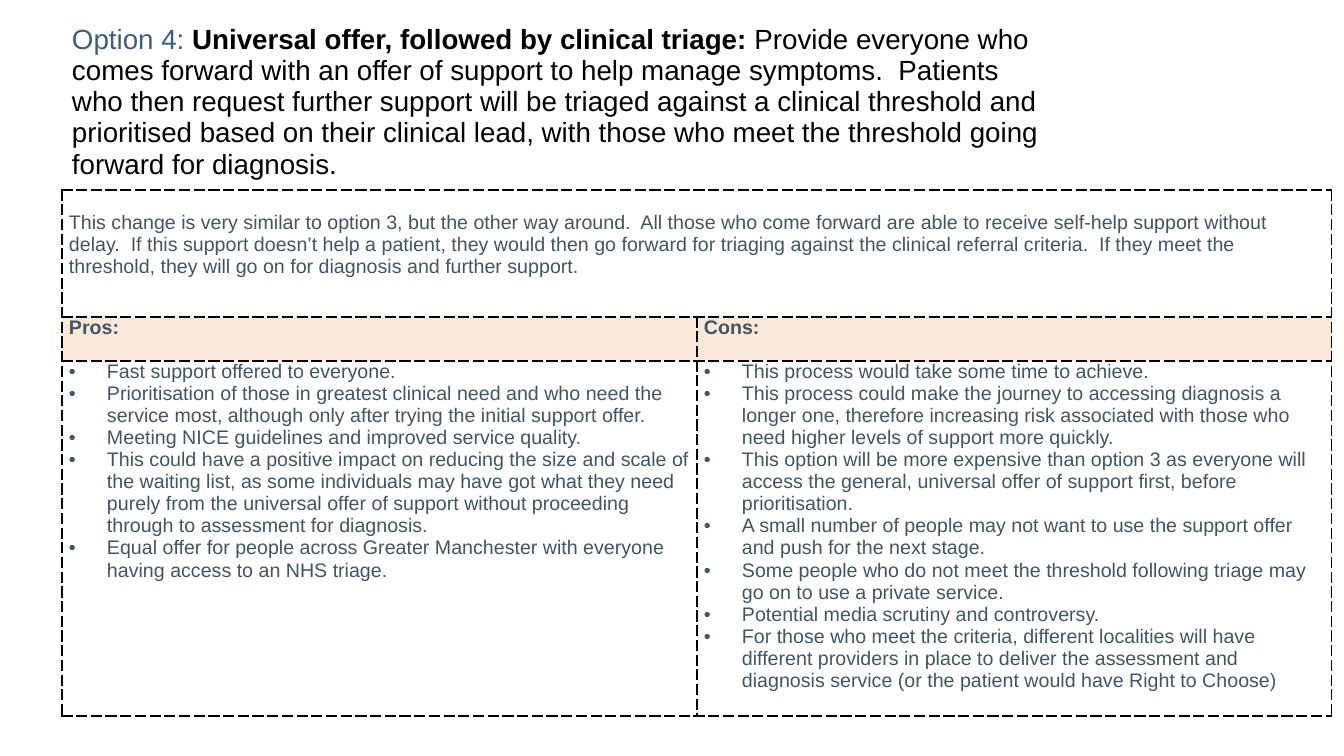
from dataclasses import dataclass

from lxml import etree
from pptx import Presentation
from pptx import util as u
from pptx.dml.color import RGBColor
from pptx.enum import text
from pptx.oxml import ns

SCALE = 914400 / 100.8
FONT = "Arial"
BLACK = RGBColor(0x00, 0x00, 0x00)
TEAL = RGBColor(0x3E, 0x5F, 0x73)
SLATE = RGBColor(0x41, 0x55, 0x63)
PEACH = RGBColor(0xFD, 0xE9, 0xD9)
WHITE = RGBColor(0xFF, 0xFF, 0xFF)
INDENT = 38
ROWS = (127, 44, 355)
COLS = (635, 635)


@dataclass(frozen=True)
class Run:
    words: str
    size: float = 14
    color: RGBColor = SLATE
    bold: bool = False


@dataclass(frozen=True)
class Panel:
    row: int
    col: int
    lines: tuple[str, ...]
    fill: RGBColor = WHITE
    bold: bool = False
    bullet: bool = False
    top: int = 0


TITLE = (
    Run("Option 4: ", 19.8, TEAL),
    Run("Universal offer, followed by clinical triage: ", 19.8, BLACK, True),
    Run("Provide everyone who comes forward with an offer of support to help "
        "manage symptoms.  Patients who then request further support will be "
        "triaged against a clinical threshold and prioritised based on their "
        "clinical lead, with those who meet the threshold going forward for "
        "diagnosis.", 19.8, BLACK),
)

SUMMARY = (
    "This change is very similar to option 3, but the other way around.  All "
    "those who come forward are able to receive self-help support without "
    "delay.  If this support doesn’t help a patient, they would then go "
    "forward for triaging against the clinical referral criteria.  If they "
    "meet the threshold, they will go on for diagnosis and further support.",
)

PROS = (
    "Fast support offered to everyone.",
    "Prioritisation of those in greatest clinical need and who need the "
    "service most, although only after trying the initial support offer.",
    "Meeting NICE guidelines and improved service quality.",
    "This could have a positive impact on reducing the size and scale of the "
    "waiting list, as some individuals may have got what they need purely "
    "from the universal offer of support without proceeding through to "
    "assessment for diagnosis.",
    "Equal offer for people across Greater Manchester with everyone having "
    "access to an NHS triage.",
)

CONS = (
    "This process would take some time to achieve.",
    "This process could make the journey to accessing diagnosis a longer "
    "one, therefore increasing risk associated with those who need higher "
    "levels of support more quickly.",
    "This option will be more expensive than option 3 as everyone will "
    "access the general, universal offer of support first, before "
    "prioritisation.",
    "A small number of people may not want to use the support offer and push "
    "for the next stage.",
    "Some people who do not meet the threshold following triage may go on to "
    "use a private service.",
    "Potential media scrutiny and controversy.",
    "For those who meet the criteria, different localities will have "
    "different providers in place to deliver the assessment and diagnosis "
    "service (or the patient would have Right to Choose)",
)

PANELS = (
    Panel(0, 0, SUMMARY, top=22),
    Panel(1, 0, ("Pros:",), PEACH, bold=True),
    Panel(1, 1, ("Cons:",), PEACH, bold=True),
    Panel(2, 0, PROS, bullet=True),
    Panel(2, 1, CONS, bullet=True),
)


def px(n: int) -> u.Emu:
    return u.Emu(round(n * SCALE))


def add_run(para, run: Run) -> None:
    part = para.add_run()
    part.text = run.words
    font = part.font
    font.name, font.size, font.bold = FONT, u.Pt(run.size), run.bold
    font.color.rgb = run.color


def add_bullet(para) -> None:
    props = para._p.get_or_add_pPr()
    props.set("marL", str(px(INDENT)))
    props.set("indent", str(-px(INDENT)))
    etree.SubElement(props, ns.qn("a:buFont"), typeface=FONT)
    etree.SubElement(props, ns.qn("a:buChar"), char="•")


def add_border(cell) -> None:
    """Put a dashed line on all four sides of a cell."""
    props = cell._tc.get_or_add_tcPr()
    for place, side in enumerate(("lnL", "lnR", "lnT", "lnB")):
        line = etree.Element(ns.qn(f"a:{side}"), w=str(u.Pt(1)))
        fill = etree.SubElement(line, ns.qn("a:solidFill"))
        etree.SubElement(fill, ns.qn("a:srgbClr"), val=str(BLACK))
        etree.SubElement(line, ns.qn("a:prstDash"), val="dash")
        props.insert(place, line)


def fill_panel(cell, panel: Panel) -> None:
    cell.margin_left = cell.margin_right = px(7)
    cell.margin_top, cell.margin_bottom = px(panel.top), 0
    cell.vertical_anchor = text.MSO_ANCHOR.TOP
    cell.fill.solid()
    cell.fill.fore_color.rgb = panel.fill
    frame = cell.text_frame
    for i, words in enumerate(panel.lines):
        para = frame.add_paragraph() if i else frame.paragraphs[0]
        if panel.bullet:
            add_bullet(para)
        add_run(para, Run(words, bold=panel.bold))


def set_title(title) -> None:
    title.left, title.top = px(62), px(24)
    title.width, title.height = px(1005), px(150)
    frame = title.text_frame
    frame.auto_size = text.MSO_AUTO_SIZE.NONE
    frame.word_wrap = True
    frame.vertical_anchor = text.MSO_ANCHOR.TOP
    frame.margin_left = frame.margin_right = px(10)
    frame.margin_top = frame.margin_bottom = 0
    para = frame.paragraphs[0]
    para.alignment = text.PP_ALIGN.LEFT
    para.line_spacing = 0.94
    for run in TITLE:
        add_run(para, run)


def add_grid(slide) -> None:
    table = slide.shapes.add_table(
        len(ROWS), len(COLS), px(62), px(190), px(sum(COLS)), px(sum(ROWS))
    ).table
    table.first_row = table.horz_banding = False
    for row, high in zip(table.rows, ROWS):
        row.height = px(high)
    for col, wide in zip(table.columns, COLS):
        col.width = px(wide)
    table.cell(0, 0).merge(table.cell(0, 1))
    for panel in PANELS:
        fill_panel(table.cell(panel.row, panel.col), panel)
    for cell in table.iter_cells():
        add_border(cell)


def main() -> None:
    deck = Presentation()
    deck.slide_width, deck.slide_height = px(1344), px(756)
    slide = deck.slides.add_slide(deck.slide_layouts[5])
    set_title(slide.shapes.title)
    add_grid(slide)
    deck.save("out.pptx")


if __name__ == "__main__":
    main()
